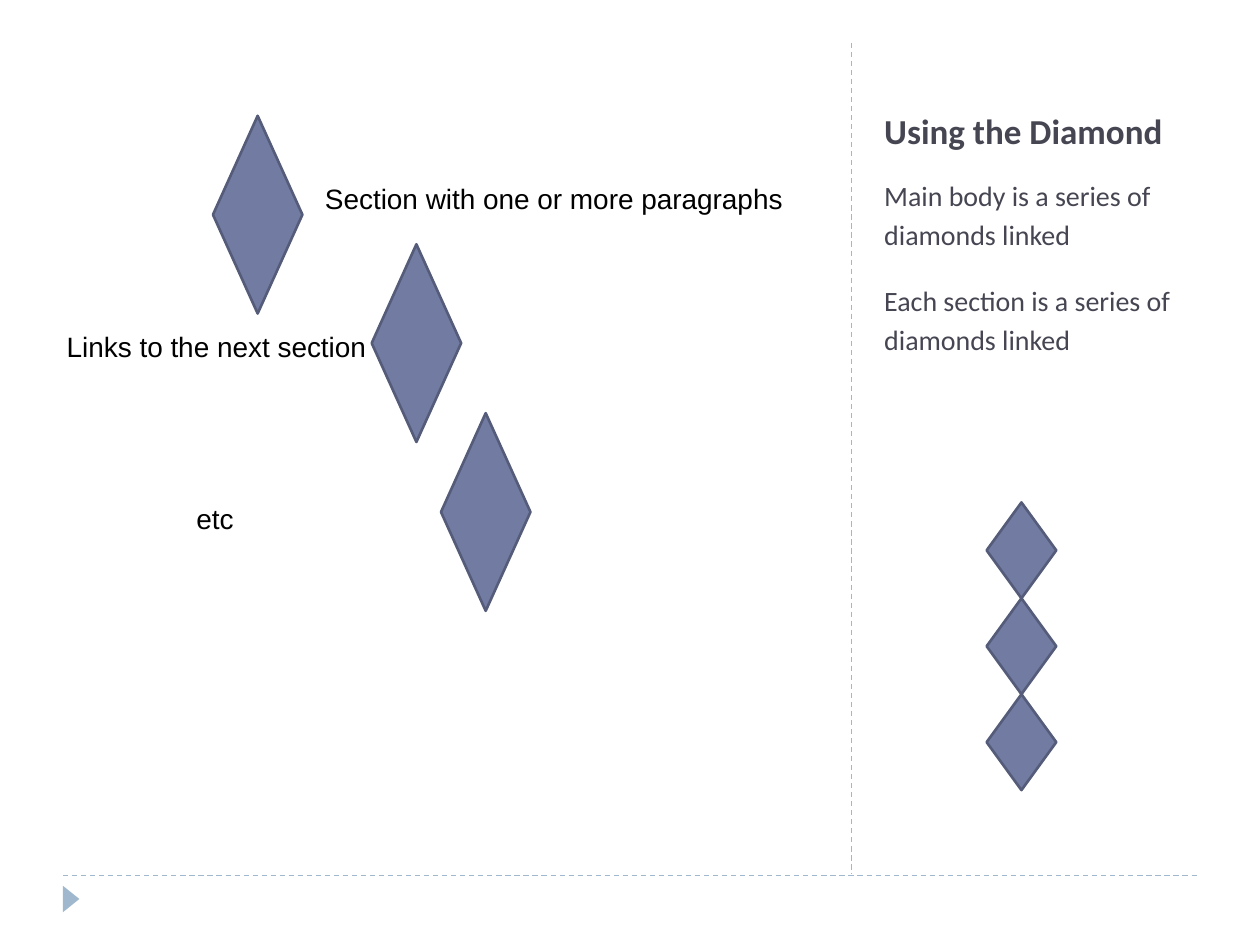
from lxml import etree
from pptx import Presentation
from pptx.dml.color import RGBColor
from pptx.enum.dml import MSO_LINE
from pptx.enum.shapes import MSO_CONNECTOR, MSO_SHAPE
from pptx.enum.text import MSO_ANCHOR
from pptx.oxml.ns import qn
from pptx.util import Pt

DASH = MSO_LINE.DASH
STRAIGHT = MSO_CONNECTOR.STRAIGHT
DIAMOND = MSO_SHAPE.DIAMOND
ARROW = MSO_SHAPE.ISOSCELES_TRIANGLE
TOP, BOTTOM = MSO_ANCHOR.TOP, MSO_ANCHOR.BOTTOM

PALE, FILL, EDGE = "9FB8CD", "727CA3", "545C79"
INK, BLACK = "464653", "000000"


def color(code):
    return RGBColor.from_string(code)


def add_rule(shapes, x1, y1, x2, y2):
    rule = shapes.add_connector(STRAIGHT, Pt(x1), Pt(y1), Pt(x2), Pt(y2))
    rule.line.color.rgb = color(PALE)
    rule.line.width = Pt(0.75)
    rule.line.dash_style = DASH
    etree.SubElement(rule._element.spPr, qn("a:effectLst"))


def add_solid(shapes, kind, x, y, w, h, fill):
    solid = shapes.add_shape(kind, Pt(x), Pt(y), Pt(w), Pt(h))
    solid.shadow.inherit = False
    solid.fill.solid()
    solid.fill.fore_color.rgb = color(fill)
    solid.line.fill.background()
    return solid


def add_diamond(shapes, x, y, w, h):
    gem = add_solid(shapes, DIAMOND, x, y, w, h, FILL)
    gem.line.color.rgb = color(EDGE)
    gem.line.width = Pt(1.5)


def add_text(shapes, x, y, w, h, lines, size, font, ink, bold=False, anchor=TOP):
    """Add a text box with one paragraph per line and return its paragraphs."""
    frame = shapes.add_textbox(Pt(x), Pt(y), Pt(w), Pt(h)).text_frame
    frame.word_wrap = True
    frame.vertical_anchor = anchor
    for i, line in enumerate(lines):
        para = frame.add_paragraph() if i else frame.paragraphs[0]
        run = para.add_run()
        run.text = line
        run.font.size = Pt(size)
        run.font.name = font
        run.font.bold = bold
        run.font.color.rgb = color(ink)
    return frame.paragraphs


def draw_frame(shapes, x, y, w, h):
    """Draw the dashed rules and the corner arrow; y + h is the footer rule."""
    base = y + h
    add_rule(shapes, x, base, x + w, base)
    add_rule(shapes, x + 450.7, y, x + 450.7, base - 0.7)
    mark = add_solid(shapes, ARROW, x - 2.9, base + 8.6, 15.1, 9.4, PALE)
    mark.rotation = 90


def draw_steps(shapes, x, y):
    """Draw the staggered diamonds and the label beside each."""
    steps = [
        (90.7, 0, "Section with one or more paragraphs", 147.6, 33.8, 289.4),
        (181.4, 73.4, "Links to the next section", 0, 118.8, 187.2),
        (221, 169.9, "etc", 74.2, 216.7, 187.2),
    ]
    for left, top, label, dx, dy, wide in steps:
        add_diamond(shapes, x + left, y + top, 51.1, 113)
        add_text(shapes, x + dx, y + dy, wide, 26.6, [label], 16, "Arial", BLACK)


def draw_side(shapes, x, y, w):
    """Draw the title, the body text and the chain of touching diamonds."""
    add_text(shapes, x, y, w, 66.2, ["Using the Diamond"], 20, "Calibri", INK,
             bold=True, anchor=BOTTOM)
    body = add_text(shapes, x, y + 72, w, 381.6, [
        "Main body is a series of diamonds linked",
        "Each section is a series of diamonds linked",
    ], 16, "Calibri", INK)
    for para in body:
        para.line_spacing = Pt(22)
        para.space_before = Pt(6)
        para.space_after = Pt(10)
    tall = 54.8
    for i in range(3):
        add_diamond(shapes, x + 65.6, y + 263.3 + i * tall, 39.8, tall)


def main():
    deck = Presentation()
    deck.slide_width, deck.slide_height = Pt(720), Pt(540)
    shapes = deck.slides.add_slide(deck.slide_layouts[6]).shapes
    draw_frame(shapes, 36, 24.5, 648, 475.9)
    draw_steps(shapes, 31, 66.2)
    draw_side(shapes, 498.2, 23.8, 198)
    deck.save("out.pptx")


if __name__ == "__main__":
    main()
